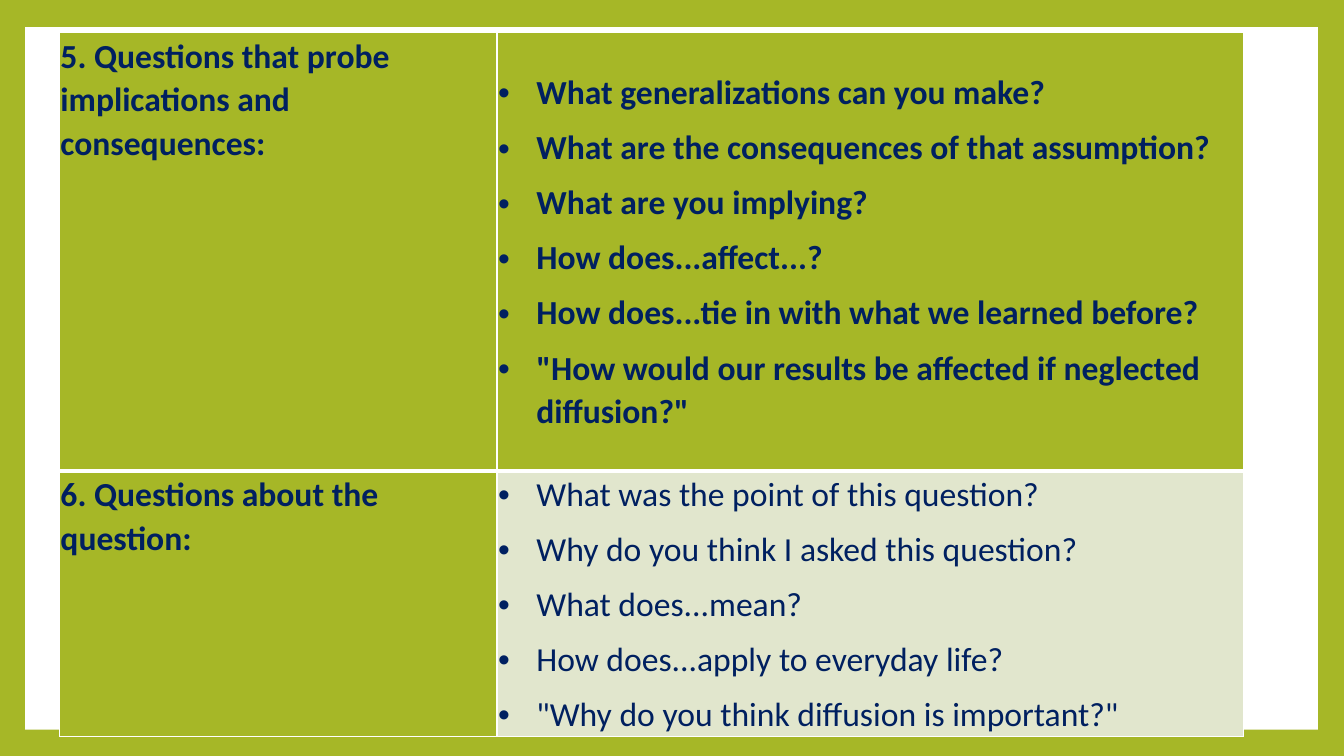
from dataclasses import dataclass

from lxml import etree
from pptx import Presentation
from pptx.dml.color import RGBColor
from pptx.enum.shapes import MSO_SHAPE
from pptx.enum.text import MSO_ANCHOR
from pptx.oxml.ns import qn
from pptx.util import Inches, Pt

RECT = MSO_SHAPE.RECTANGLE
TOP = MSO_ANCHOR.TOP
MIDDLE = MSO_ANCHOR.MIDDLE

COLORS = {"green": "A6B727", "pale": "E1E6CD", "white": "FFFFFF", "navy": "002060"}
WIDTHS = (4.34, 7.4)
HEIGHTS = (4.35, 2.55)
INDENT = 0.38
TAB = 0.5


@dataclass
class Topic:
    title: str
    items: list[str]
    fill: str
    bold: bool
    after: int
    edges: dict[str, int]


TOPICS = [
    Topic(
        "5. Questions that probe implications and consequences:",
        [
            "What generalizations can you make?",
            "What are the consequences of that assumption?",
            "What are you implying?",
            "How does...affect...?",
            "How does...tie in with what we learned before?",
            '"How would our results be affected if neglected diffusion?"',
        ],
        "green", True, 12, {"L": 1, "R": 1, "T": 1, "B": 3},
    ),
    Topic(
        "6. Questions about the question:",
        [
            "What was the point of this question?",
            "Why do you think I asked this question?",
            "What does...mean?",
            "How does...apply to everyday life?",
            '"Why do you think diffusion is important?"',
        ],
        "pale", False, 8, {"L": 1, "R": 1, "T": 3, "B": 1},
    ),
]


def color(name: str) -> RGBColor:
    return RGBColor.from_string(COLORS[name])


def add_bullet(para) -> None:
    props = para._p.get_or_add_pPr()
    props.set("marL", str(Inches(INDENT)))
    props.set("indent", str(Inches(-INDENT)))
    etree.SubElement(props, qn("a:buFont"), typeface="Arial")
    etree.SubElement(props, qn("a:buChar"), char="•")
    tabs = etree.SubElement(props, qn("a:tabLst"))
    etree.SubElement(tabs, qn("a:tab"), pos=str(Inches(TAB)), algn="l")


def write(para, text: str, *, bold: bool = True, after: int = 0, bullet: bool = False) -> None:
    para.line_spacing = 1.07
    para.space_after = Pt(after)
    if bullet:
        add_bullet(para)
    run = para.add_run()
    run.text = text
    run.font.name = "Calibri"
    run.font.size = Pt(24)
    run.font.bold = bold
    run.font.color.rgb = color("navy")


def style_cell(cell, fill: str, edges: dict[str, int], anchor) -> None:
    cell.margin_left = cell.margin_right = Inches(0.01)
    cell.margin_top = cell.margin_bottom = Inches(0.01)
    cell.vertical_anchor = anchor
    props = cell._tc.get_or_add_tcPr()
    for side, width in edges.items():
        line = etree.SubElement(props, qn(f"a:ln{side}"), w=str(Pt(width)))
        solid = etree.SubElement(line, qn("a:solidFill"))
        etree.SubElement(solid, qn("a:srgbClr"), val=COLORS["white"])
    cell.fill.solid()
    cell.fill.fore_color.rgb = color(fill)


def add_panel(slide) -> None:
    panel = slide.shapes.add_shape(RECT, Inches(0.25), Inches(0.27), Inches(12.82), Inches(6.97))
    panel.shadow.inherit = False
    panel.fill.solid()
    panel.fill.fore_color.rgb = color("white")
    panel.line.fill.background()


def add_topics(slide) -> None:
    frame = slide.shapes.add_table(
        len(TOPICS), len(WIDTHS), Inches(0.59), Inches(0.32),
        Inches(sum(WIDTHS)), Inches(sum(HEIGHTS)),
    )
    table = frame.table
    table.first_row = False
    table.horz_banding = False
    for column, width in zip(table.columns, WIDTHS):
        column.width = Inches(width)
    for index, (topic, height) in enumerate(zip(TOPICS, HEIGHTS)):
        table.rows[index].height = Inches(height)
        head, body = table.cell(index, 0), table.cell(index, 1)
        style_cell(head, "green", topic.edges, TOP)
        style_cell(body, topic.fill, topic.edges, MIDDLE)
        write(head.text_frame.paragraphs[0], topic.title)
        text = body.text_frame
        last = len(topic.items) - 1
        for place, item in enumerate(topic.items):
            para = text.add_paragraph() if place else text.paragraphs[0]
            after = topic.after if place == last else 8
            write(para, item, bold=topic.bold, after=after, bullet=True)


def main() -> None:
    deck = Presentation()
    deck.slide_width = Inches(13.33)
    deck.slide_height = Inches(7.5)
    slide = deck.slides.add_slide(deck.slide_layouts[6])
    slide.background.fill.solid()
    slide.background.fill.fore_color.rgb = color("green")
    add_panel(slide)
    add_topics(slide)
    deck.save("out.pptx")


if __name__ == "__main__":
    main()
